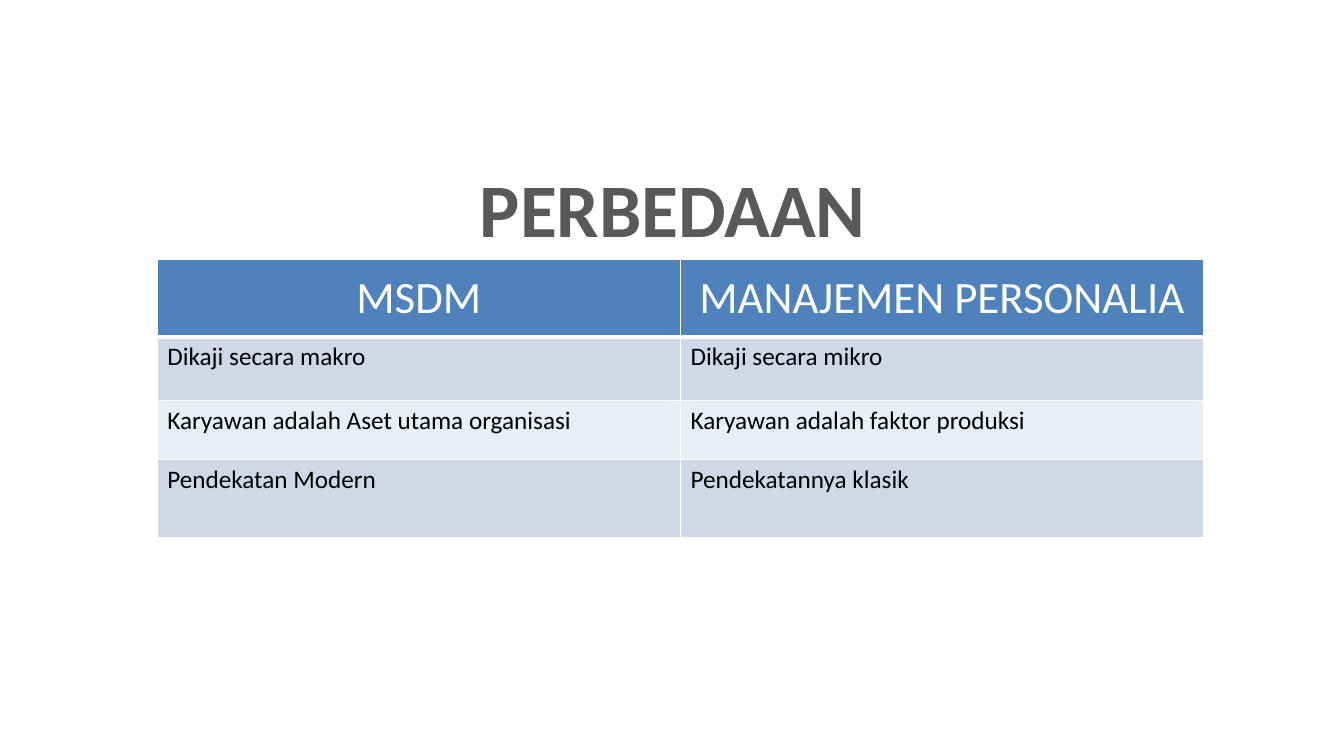
"""Build a slide comparing MSDM with personnel management."""
from dataclasses import dataclass

from lxml.etree import SubElement
from pptx import Presentation
from pptx.dml.color import RGBColor
from pptx.enum.text import MSO_ANCHOR, PP_ALIGN
from pptx.oxml.ns import qn
from pptx.util import Inches, Pt

TITLE = "PERBEDAAN"
ROWS = [
    ("MSDM", "MANAJEMEN PERSONALIA"),
    ("Dikaji secara makro", "Dikaji secara mikro"),
    ("Karyawan adalah Aset utama organisasi", "Karyawan adalah faktor produksi"),
    ("Pendekatan Modern", "Pendekatannya klasik"),
]
SLIDE_W, SLIDE_H = 13.33, 7.5
TITLE_BOX = (1.41, 1.53, 10.53, 0.5)
TABLE_LEFT, TABLE_TOP, COL_W = 1.56, 2.57, 5.19
ROW_HEIGHTS = (0.77, 0.63, 0.59, 0.77)


@dataclass(frozen=True)
class Theme:
    font: str = "Calibri"
    title: str = "595959"
    header: str = "4F81BD"
    bands: tuple = ("E9EDF4", "D0D8E8")
    light: str = "FFFFFF"
    dark: str = "000000"
    title_size: int = 54
    header_size: int = 32
    body_size: int = 18
    rule: int = 1
    header_rule: int = 3


T = Theme()


def write(tf, text, size, color, bold=False, align=PP_ALIGN.LEFT):
    p = tf.paragraphs[0]
    p.alignment = align
    r = p.add_run()
    r.text = text
    r.font.name, r.font.size, r.font.bold = T.font, Pt(size), bold
    r.font.color.rgb = RGBColor.from_string(color)


def fill_cell(cell, color, bottom):
    tc_pr = cell._tc.get_or_add_tcPr()
    for side in "LRTB":
        width = bottom if side == "B" else T.rule
        ln = SubElement(tc_pr, qn(f"a:ln{side}"), w=str(Pt(width)))
        SubElement(SubElement(ln, qn("a:solidFill")), qn("a:srgbClr"), val=T.light)
    cell.fill.solid()
    cell.fill.fore_color.rgb = RGBColor.from_string(color)


def add_title(s):
    tf = s.shapes.add_textbox(*map(Inches, TITLE_BOX)).text_frame
    tf.word_wrap = True
    tf.vertical_anchor = MSO_ANCHOR.TOP
    tf.margin_top = Inches(0.08)
    write(tf, TITLE, T.title_size, T.title, bold=True, align=PP_ALIGN.CENTER)


def add_comparison(s):
    cols = len(ROWS[0])
    box = (TABLE_LEFT, TABLE_TOP, COL_W * cols, sum(ROW_HEIGHTS))
    table = s.shapes.add_table(len(ROWS), cols, *map(Inches, box)).table
    for col in table.columns:
        col.width = Inches(COL_W)
    for i, (texts, height) in enumerate(zip(ROWS, ROW_HEIGHTS)):
        table.rows[i].height = Inches(height)
        for j, text in enumerate(texts):
            cell = table.cell(i, j)
            if i == 0:
                cell.vertical_anchor = MSO_ANCHOR.MIDDLE
                fill_cell(cell, T.header, T.header_rule)
                write(cell.text_frame, text, T.header_size, T.light, align=PP_ALIGN.CENTER)
            else:
                fill_cell(cell, T.bands[i % 2], T.rule)
                write(cell.text_frame, text, T.body_size, T.dark)


def main():
    prs = Presentation()
    prs.slide_width, prs.slide_height = Inches(SLIDE_W), Inches(SLIDE_H)
    s = prs.slides.add_slide(prs.slide_layouts[6])
    add_title(s)
    add_comparison(s)
    prs.save("out.pptx")


if __name__ == "__main__":
    main()
